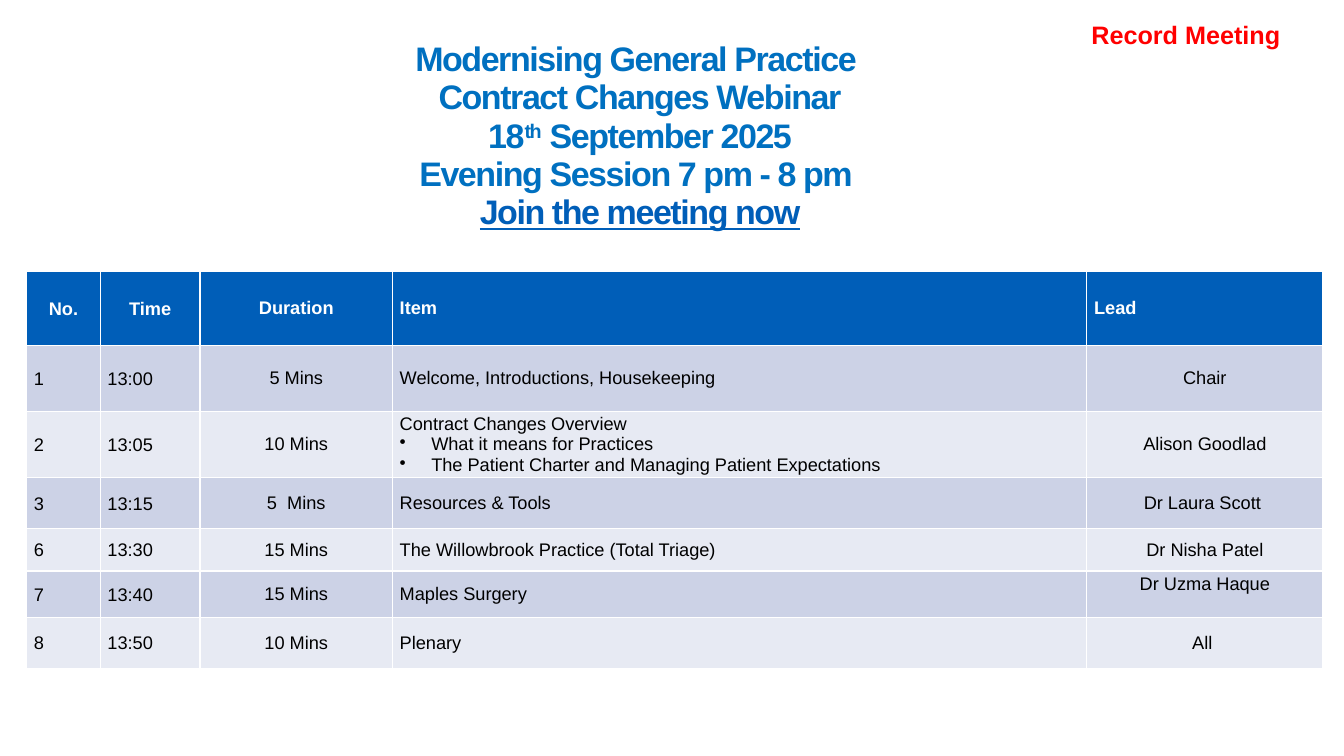
import pptx
import pptx.util
import pptx.dml.color
import pptx.enum.text
import lxml.etree

Pt = pptx.util.Pt
ALIGN = pptx.enum.text.PP_ALIGN
MID = pptx.enum.text.MSO_ANCHOR.MIDDLE

HEADS = ["No.", "Time", "Duration", "Item", "Lead"]
ROWS = [
    ["1", "13:00", "5 Mins", "Welcome, Introductions, Housekeeping", "Chair"],
    ["2", "13:05", "10 Mins",
     "Contract Changes Overview\nWhat it means for Practices\n"
     "The Patient Charter and Managing Patient Expectations",
     "Alison Goodlad"],
    ["3", "13:15", "5  Mins", "Resources & Tools", "Dr Laura Scott "],
    ["6", "13:30", "15 Mins", "The Willowbrook Practice (Total Triage)",
     "Dr Nisha Patel"],
    ["7", "13:40", "15 Mins", "Maples Surgery", "Dr Uzma Haque"],
    ["8", "13:50", "10 Mins", "Plenary", "All "],
]
WIDTHS = [52.6, 71.3, 137.5, 496, 168.5]
HEIGHTS = [52.6, 47.5, 45.4, 36.7, 30.2, 33.1, 36.7]


def paint(text):
    """Turn a hex string into a colour."""
    return pptx.dml.color.RGBColor.from_string(text)


def style(font, size, color, bold=False):
    """Set the face, size, colour and weight of a font."""
    font.name = "Arial"
    font.size = Pt(size)
    font.bold = bold
    font.color.rgb = paint(color)


def add_box(slide, left, top, width, height):
    """Add a wrapping text box and return its frame."""
    box = slide.shapes.add_textbox(Pt(left), Pt(top), Pt(width), Pt(height))
    box.text_frame.word_wrap = True
    return box.text_frame


def add_title(slide, left, top, width, height):
    """Place the centred webinar title."""
    frame = add_box(slide, left, top, width, height)
    frame.vertical_anchor = MID
    lines = [["Modernising General Practice "],
             ["Contract Changes Webinar"],
             ["18", "th", " September 2025"],
             ["Evening Session 7 pm - 8 pm "],
             ["Join the meeting now"]]
    for i, parts in enumerate(lines):
        para = frame.paragraphs[0] if i == 0 else frame.add_paragraph()
        para.alignment = ALIGN.CENTER
        para.line_spacing = 0.94
        last = i == len(lines) - 1
        style(para.font, 24.3, "005EB8" if last else "0070C0", True)
        para.font.underline = last
        for part in parts:
            run = para.add_run()
            run.text = part
            props = run._r.get_or_add_rPr()
            props.set("spc", "-100")
            if part == "th":
                props.set("baseline", "30000")


def add_note(slide, left, top, width, height):
    """Place the red reminder to record."""
    para = add_box(slide, left, top, width, height).paragraphs[0]
    para.text = "Record Meeting"
    style(para.font, 18, "FF0000", True)


def add_dot(para):
    """Give a paragraph a hanging round bullet."""
    props = para._p.get_or_add_pPr()
    props.set("marL", str(Pt(22.5)))
    props.set("indent", str(-Pt(22.5)))
    tag = "{http://schemas.openxmlformats.org/drawingml/2006/main}buChar"
    lxml.etree.SubElement(props, tag).set("char", "•")


def fill_cell(cell, text, row, col):
    """Write and colour one cell of the agenda."""
    head = row == 0
    cell.fill.solid()
    shade = "CCD2E6" if row % 2 else "E7EAF3"
    cell.fill.fore_color.rgb = paint("005EB8" if head else shade)
    cell.vertical_anchor = MID
    cell.margin_left = cell.margin_right = Pt(5.2)
    cell.margin_top = 0
    cell.margin_bottom = Pt(14 if text == "Dr Uzma Haque" else 0)
    cell.text = text
    center = col < 3 if head else col in (2, 4)
    for i, para in enumerate(cell.text_frame.paragraphs):
        para.alignment = ALIGN.CENTER if center else ALIGN.LEFT
        if col < 2:
            para.line_spacing = 1.07
        if i > 0:
            add_dot(para)
        style(para.font, 13, "FFFFFF" if head else "000000", head)


def add_plan(slide, left, top):
    """Place the agenda table."""
    grid = [HEADS] + ROWS
    table = slide.shapes.add_table(
        len(grid), len(HEADS), Pt(left), Pt(top),
        Pt(sum(WIDTHS)), Pt(sum(HEIGHTS))).table
    for col, width in zip(table.columns, WIDTHS):
        col.width = Pt(width)
    for r, texts in enumerate(grid):
        table.rows[r].height = Pt(HEIGHTS[r])
        for c, text in enumerate(texts):
            fill_cell(table.cell(r, c), text, r, c)


def main():
    """Build the agenda slide and save it."""
    deck = pptx.Presentation()
    deck.slide_width, deck.slide_height = Pt(960), Pt(540)
    slide = deck.slides.add_slide(deck.slide_layouts[6])
    add_title(slide, 0, 27.5, 914.4, 140.4)
    add_plan(slide, 19, 194)
    add_note(slide, 772.5, 10, 172.8, 29)
    deck.save("out.pptx")


if __name__ == "__main__":
    main()
